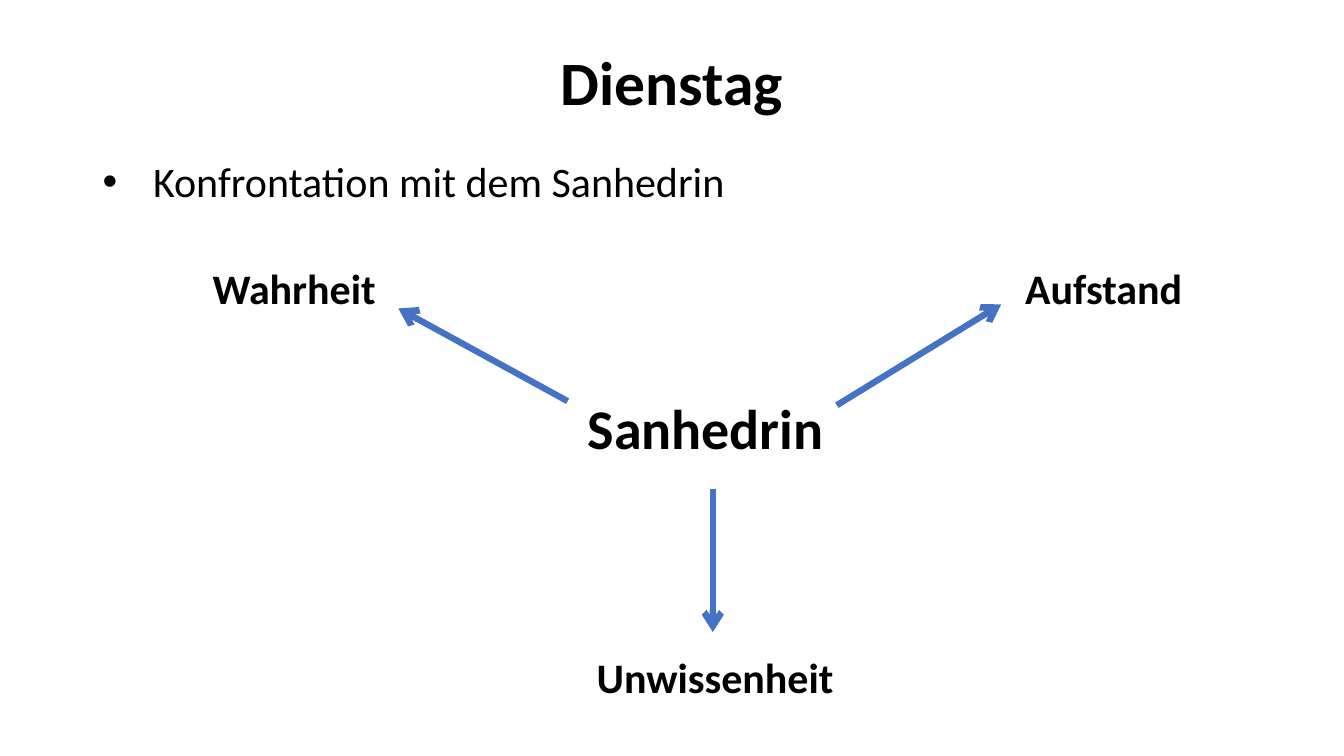
from lxml.etree import SubElement
from pptx import Presentation
from pptx.dml.color import RGBColor
from pptx.enum.shapes import MSO_CONNECTOR
from pptx.enum.text import MSO_ANCHOR, PP_ALIGN
from pptx.oxml.ns import qn
from pptx.util import Inches, Pt

# Content
TITLE = "Dienstag"
POINT = "Konfrontation mit dem Sanhedrin"
WIDE, HIGH = 13.33, 7.5
EDGE = 0.92
INK, BLUE = "000000", "4472C4"

# Labels: text, left, top, width, height, size
LABELS = [
    ("Sanhedrin", 5.73, 3.86, 2.57, 0.77, 40),
    ("Wahrheit", 2.01, 2.56, 1.84, 0.61, 30),
    ("Aufstand", 10.07, 2.56, 1.78, 0.61, 30),
    ("Unwissenheit", 5.82, 6.41, 2.58, 0.61, 30),
]
# Arrows: start, tip
ARROWS = [
    ((5.63, 3.98), (3.95, 3.06)),
    ((7.07, 4.85), (7.07, 6.27)),
    ((8.3, 4.02), (9.93, 3.02)),
]


def color(code):
    return RGBColor.from_string(code)


def write(shape, text, size=30, bold=False, align=PP_ALIGN.LEFT,
          anchor=MSO_ANCHOR.TOP, wrap=True, space=None, before=0):
    frame = shape.text_frame
    frame.word_wrap = wrap
    frame.vertical_anchor = anchor
    para = frame.paragraphs[0]
    para.alignment = align
    para.line_spacing = space
    para.space_before = Pt(before)
    run = para.add_run()
    run.text = text
    font = run.font
    font.name, font.size, font.bold = "Calibri", Pt(size), bold
    font.color.rgb = color(INK)
    return para


def add_bullet(para, indent):
    props = para._p.get_or_add_pPr()
    props.set("marL", str(Inches(indent)))
    props.set("indent", str(-Inches(indent)))
    SubElement(props, qn("a:buFont"), typeface="Arial")
    SubElement(props, qn("a:buChar"), char="•")


def add_box(slide, *area):
    return slide.shapes.add_textbox(*map(Inches, area))


def add_arrow(slide, start, tip):
    line = slide.shapes.add_connector(
        MSO_CONNECTOR.STRAIGHT, *map(Inches, start + tip))
    line.line.color.rgb = color(BLUE)
    line.line.width = Pt(4.5)
    SubElement(line.line._get_or_add_ln(), qn("a:tailEnd"), type="arrow")
    SubElement(line._element.spPr, qn("a:effectLst"))


def main():
    deck = Presentation()
    deck.slide_width, deck.slide_height = Inches(WIDE), Inches(HIGH)
    slide = deck.slides.add_slide(deck.slide_layouts[5])

    # Title
    title = slide.shapes.title
    title.left, title.top = Inches(EDGE), Inches(0.4)
    title.width, title.height = Inches(WIDE - 2 * EDGE), Inches(0.89)
    write(title, TITLE, size=44, bold=True, align=PP_ALIGN.CENTER,
          anchor=MSO_ANCHOR.MIDDLE, space=0.9)

    # Bullet point
    body = add_box(slide, EDGE, 1.55, 12.04, 1.15)
    add_bullet(write(body, POINT, space=0.9, before=10), 0.5)

    # Centre and its three outcomes
    for text, left, top, width, height, size in LABELS:
        box = add_box(slide, left, top, width, height)
        write(box, text, size=size, bold=True, wrap=False)
    for start, tip in ARROWS:
        add_arrow(slide, start, tip)

    deck.save("out.pptx")


if __name__ == "__main__":
    main()
